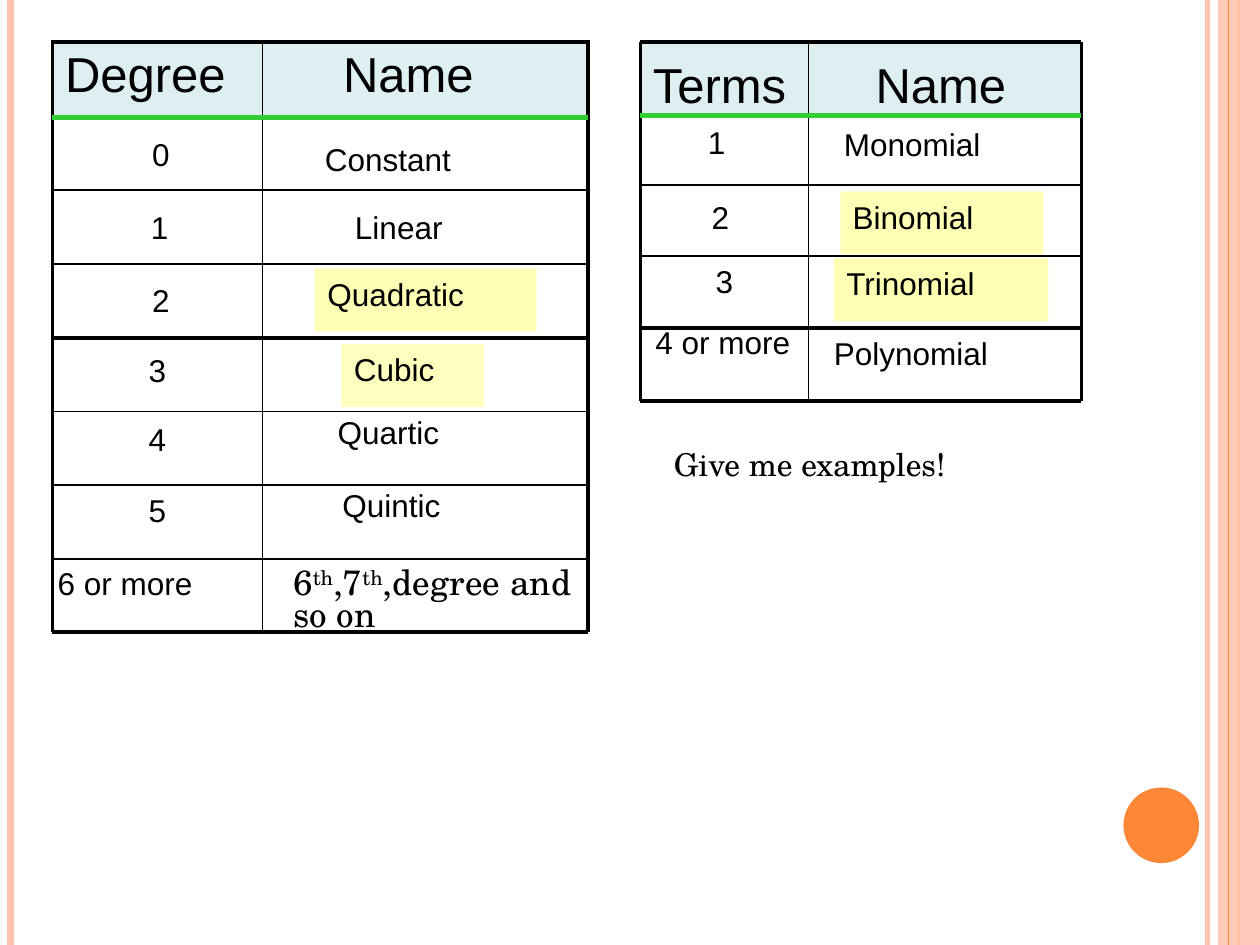
"""Build a slide naming polynomials by degree and by number of terms."""
from lxml.etree import SubElement
from pptx import Presentation
from pptx.dml.color import RGBColor
from pptx.enum.shapes import MSO_CONNECTOR, MSO_SHAPE
from pptx.enum.text import MSO_ANCHOR, PP_ALIGN
from pptx.oxml.ns import qn
from pptx.util import Pt

WIDTH, HEIGHT = 720, 540
SANS, SERIF = "Arial", "TeX Gyre Schola"
BLACK, GREEN, ORANGE, PEACH = "000000", "33CC33", "FE8637", "FEC3AE"
HEADER, YELLOW = "BBE0E3", "FFFF66"
THICK, THIN = 2.25, 1

DEGREE_COLUMNS = [30, 150, 336]
DEGREE_TOP, DEGREE_ROW, TABLE_ROWS = 24, 42.25, 4
DEGREE_HEADERS = [("Degree", 7.2, 49), ("Name", 46.1, 48)]
TERMS_COLUMNS = [366, 462, 618]
TERMS_TOP, TERMS_ROW, TERMS_ROWS = 24.25, 40.75, 4
TERMS_BOTTOM = 229
TERMS_HEADERS = [("Terms", 7.2), ("Name", 38.3)]

LABELS = [
    ("0", 79.9, 73.4, 22), ("1", 79.2, 115.2, 22), ("2", 79.9, 157, 22),
    ("3", 77.8, 197.3, 22), ("4", 77.8, 236.2, 22), ("5", 77.8, 277.2, 22),
    ("6 or more", 25.9, 319, 124),
    ("Constant", 178.6, 76.3, 119), ("Linear", 195.8, 115.2, 86),
    ("Quartic", 185.8, 232.6, 99), ("Quintic", 188.6, 274.3, 97),
    ("1", 397.4, 67, 28), ("2", 399.6, 109.4, 28), ("3", 401.8, 146.2, 28),
    ("Monomial", 475.2, 67.7, 127), ("Polynomial", 469.4, 187.2, 143),
]
HIGHLIGHTS = [
    ("Quadratic", 180, 153.4, 126.7, 48), ("Cubic", 195.1, 196.6, 81.4, 42),
    ("Binomial", 480.2, 109.4, 116, 48), ("Trinomial", 476.6, 147.6, 122.4, 49),
]
HIGHER_DEGREES = [("6", False), ("th", True), (",7", False), ("th", True),
                  (",degree and so on", False)]


def color(value):
    return RGBColor.from_string(value)


def set_alpha(fill_parent, percent):
    for color_element in fill_parent.iter(qn("a:srgbClr")):
        SubElement(color_element, qn("a:alpha")).set("val", str(percent * 1000))


def add_line(slide, start, end, value, width, alpha=100):
    line = slide.shapes.add_connector(MSO_CONNECTOR.STRAIGHT, *map(Pt, start + end))
    line.line.color.rgb = color(value)
    line.line.width = Pt(width)
    properties = line._element.spPr
    if alpha < 100:
        set_alpha(properties, alpha)
    SubElement(properties, qn("a:effectLst"))


def add_filled(slide, kind, box, value, alpha=100):
    shape = slide.shapes.add_shape(kind, *map(Pt, box))
    shape.shadow.inherit = False
    shape.fill.solid()
    shape.fill.fore_color.rgb = color(value)
    if alpha < 100:
        set_alpha(shape._element.spPr, alpha)
    shape.line.fill.background()
    return shape


def write(frame, text, size=18, font=SANS, align=PP_ALIGN.LEFT, spacing=None,
          left=7.2, top=3.6):
    frame.word_wrap = True
    frame.vertical_anchor = MSO_ANCHOR.TOP
    frame.margin_left, frame.margin_top = Pt(left), Pt(top)
    paragraph = frame.paragraphs[0]
    paragraph.alignment = align
    if spacing:
        paragraph.line_spacing = spacing
    for words, raised in [(text, False)] if isinstance(text, str) else text:
        run = paragraph.add_run()
        run.text = words
        run.font.size, run.font.name = Pt(size), font
        run.font.color.rgb = color(BLACK)
        if raised:
            run.font._element.set("baseline", "30000")


def add_text(slide, text, box, **style):
    write(slide.shapes.add_textbox(*map(Pt, box)).text_frame, text, **style)


def set_borders(cell, widths):
    properties = cell._tc.get_or_add_tcPr()
    for index, (side, width) in enumerate(widths.items()):
        border = properties.makeelement(qn(f"a:ln{side}"), {"w": str(int(Pt(width)))})
        SubElement(SubElement(border, qn("a:solidFill")), qn("a:srgbClr")).set("val", BLACK)
        properties.insert(index, border)


def add_degree_table(slide):
    left, middle, right = DEGREE_COLUMNS
    table_bottom = DEGREE_TOP + TABLE_ROWS * DEGREE_ROW
    table = slide.shapes.add_table(TABLE_ROWS, 2, Pt(left), Pt(DEGREE_TOP), Pt(right - left),
                                   Pt(TABLE_ROWS * DEGREE_ROW)).table
    table.first_row = table.horz_banding = False
    table.columns[0].width, table.columns[1].width = Pt(middle - left), Pt(right - middle)
    for row in range(TABLE_ROWS):
        for column in range(2):
            cell = table.cell(row, column)
            cell.fill.background()
            if row == 0:
                text, margin, alpha = DEGREE_HEADERS[column]
                cell.fill.solid()
                cell.fill.fore_color.rgb = color(HEADER)
                set_alpha(cell._tc.tcPr, alpha)
                write(cell.text_frame, text, size=28)
                cell.margin_left = Pt(margin)
            set_borders(cell, {
                "L": THICK if column == 0 else THIN, "R": THICK if column == 1 else THIN,
                "T": THICK if row == 0 else THIN,
                "B": THICK if row == TABLE_ROWS - 1 else THIN})
    bottom = table_bottom + 4 * 42.1
    for row in range(5):
        y = table_bottom + row * 42.1
        add_line(slide, (left, y), (right, y), BLACK, THICK if row in (0, 4) else THIN)
    for x in DEGREE_COLUMNS:
        add_line(slide, (x, table_bottom), (x, bottom), BLACK, THIN if x == middle else THICK)
    add_line(slide, (left, 67), (right, 67), GREEN, 3)


def add_terms_grid(slide):
    left, middle, right = TERMS_COLUMNS
    for (text, margin), start, end in zip(TERMS_HEADERS, TERMS_COLUMNS, TERMS_COLUMNS[1:]):
        header = add_filled(slide, MSO_SHAPE.RECTANGLE,
                            (start, TERMS_TOP, end - start, TERMS_ROW), HEADER, 49)
        write(header.text_frame, text, size=28, left=margin, top=6.8)
    rows = [TERMS_TOP + row * TERMS_ROW for row in range(TERMS_ROWS + 1)] + [TERMS_BOTTOM]
    for index, y in enumerate(rows):
        add_line(slide, (left, y), (right, y), BLACK, THICK if index in (0, 4, 5) else THIN)
    for x in TERMS_COLUMNS:
        add_line(slide, (x, TERMS_TOP), (x, TERMS_BOTTOM), BLACK, THIN if x == middle else THICK)
    add_line(slide, (left, 66), (right, 66), GREEN, 3)


def add_decoration(slide):
    add_line(slide, (690, 0), (690, HEIGHT), PEACH, 3, 93)
    add_line(slide, (6, 0), (6, HEIGHT), PEACH, 4.5)
    add_line(slide, (708, 0), (708, HEIGHT), ORANGE, 1.5)
    add_filled(slide, MSO_SHAPE.RECTANGLE, (696, 0, 24, HEIGHT), PEACH, 87)
    add_line(slide, (702, 0), (702, HEIGHT), ORANGE, 0.75)
    add_filled(slide, MSO_SHAPE.OVAL, (642, 450, 43.2, 43.2), ORANGE)


def main():
    presentation = Presentation()
    presentation.slide_width, presentation.slide_height = Pt(WIDTH), Pt(HEIGHT)
    slide = presentation.slides.add_slide(presentation.slide_layouts[6])
    add_decoration(slide)
    add_degree_table(slide)
    add_terms_grid(slide)
    for text, left, top, width in LABELS:
        add_text(slide, text, (left, top, width, 36))
    for text, left, top, width, alpha in HIGHLIGHTS:
        shape = add_filled(slide, MSO_SHAPE.RECTANGLE, (left, top, width, 36), YELLOW, alpha)
        write(shape.text_frame, text)
    add_text(slide, HIGHER_DEGREES, (160.6, 322.6, 187.2, 43.2), size=20, font=SERIF, spacing=0.75)
    add_text(slide, "4 or more", (365.8, 187.9, 94.3, 44.6), align=PP_ALIGN.CENTER, spacing=0.65)
    add_text(slide, "Give me examples!", (378, 250.6, 203.8, 28.8), font=SERIF)
    presentation.save("out.pptx")


if __name__ == "__main__":
    main()
